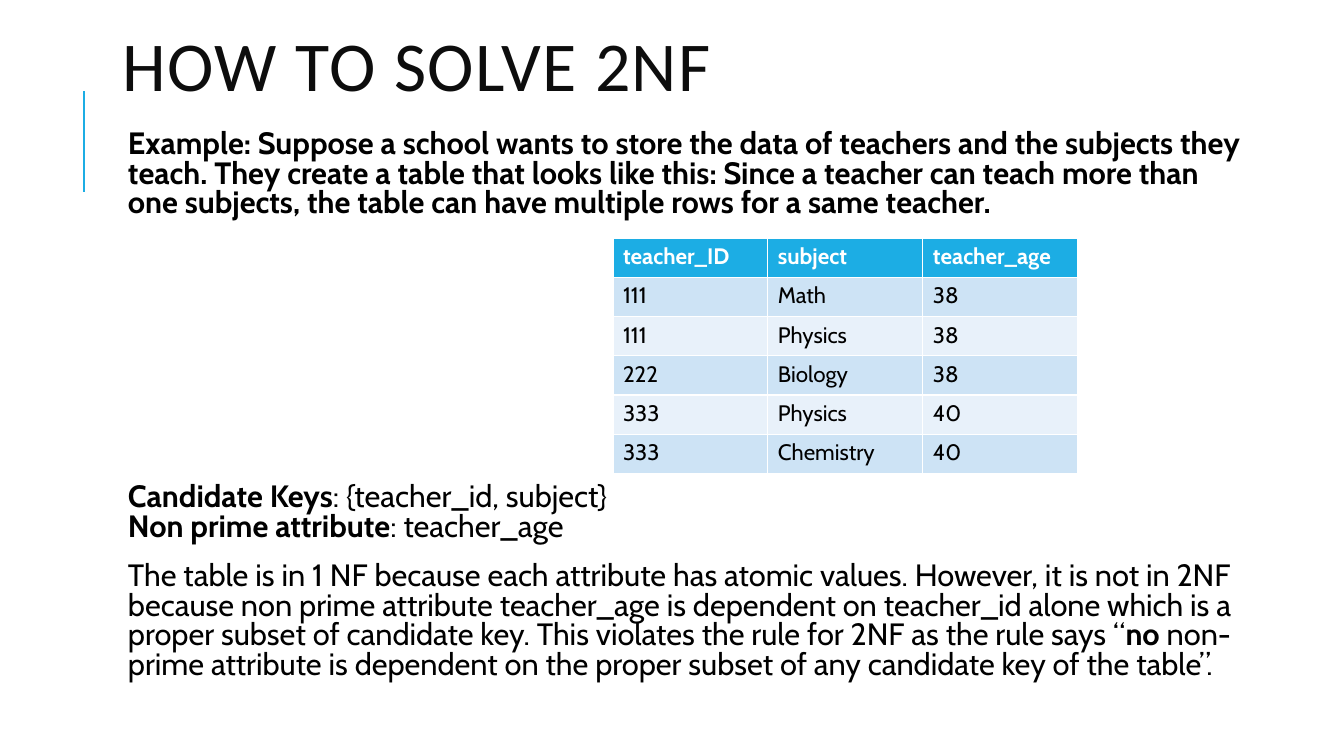
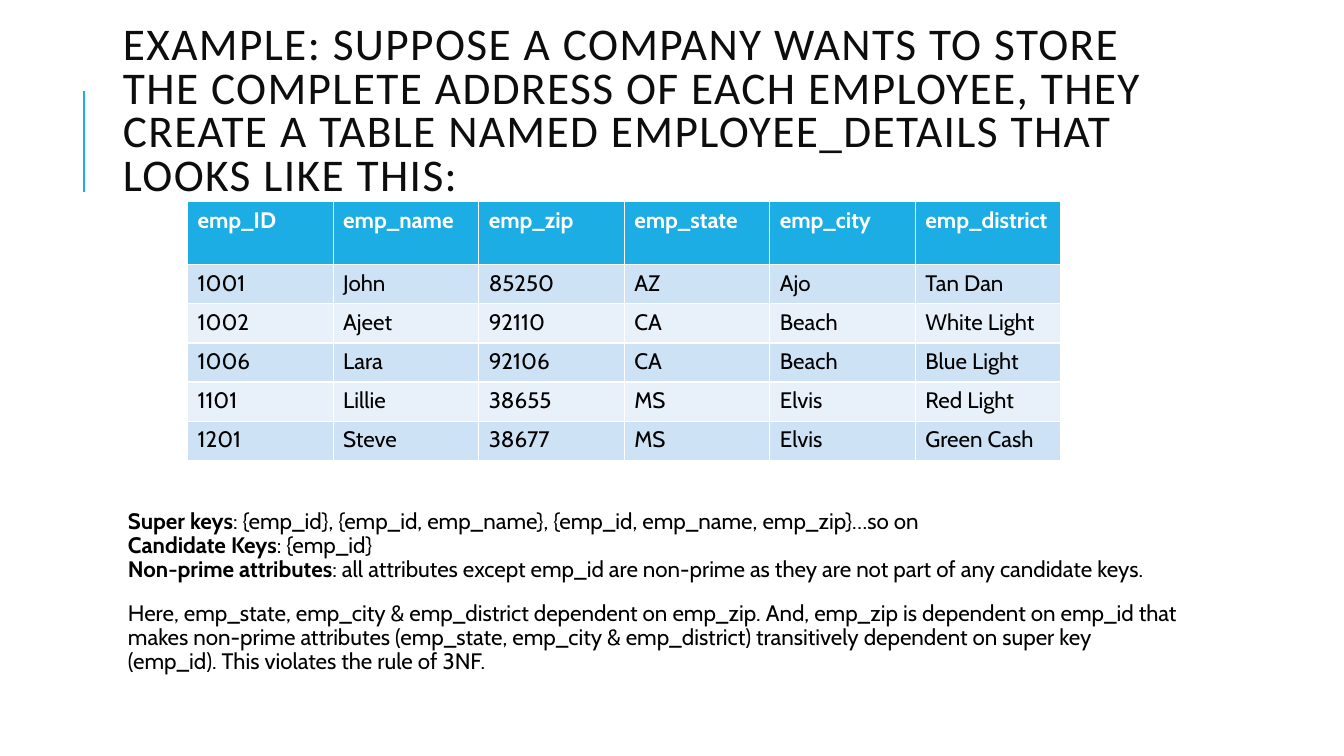
from pptx import Presentation
from pptx.dml.color import RGBColor
from pptx.enum.shapes import MSO_CONNECTOR
from pptx.enum.text import MSO_ANCHOR, MSO_AUTO_SIZE, PP_ALIGN
from pptx.oxml.ns import qn
from pptx.util import Pt

STRAIGHT = MSO_CONNECTOR.STRAIGHT
TOP, MIDDLE = MSO_ANCHOR.TOP, MSO_ANCHOR.MIDDLE
NO_FIT = MSO_AUTO_SIZE.NONE
LEFT = PP_ALIGN.LEFT

COLORS = {
    "accent": "1CADE4",
    "title": "0D0D0D",
    "text": "000000",
    "header": "FFFFFF",
    "band_dark": "CDE3F5",
    "band_light": "E8F1FA",
}
TITLE_FONT, BODY_FONT = "Calibri", "Cabin"
MARGIN = 80.64
ROW_HEIGHT = 28


def rgb(name):
    return RGBColor.from_string(COLORS[name])


def apply(target, values):
    for name, value in values.items():
        setattr(target, name, value)


class Deck:
    def __init__(self):
        self.prs = Presentation()
        apply(self.prs, {"slide_width": Pt(960), "slide_height": Pt(540)})
        self.s = None

    def slide(self):
        """Start a slide with the accent rule on its left."""
        self.s = self.prs.slides.add_slide(self.prs.slide_layouts[5])
        rule = self.s.shapes.add_connector(
            STRAIGHT, Pt(60), Pt(136.8), Pt(60), Pt(64.8))
        rule.line.color.rgb = rgb("accent")
        rule.line.width = Pt(1.5)
        sp_pr = rule._element.spPr
        sp_pr.append(sp_pr.makeelement(qn("a:effectLst"), {}))

    def place(self, sp, top, width, height):
        apply(sp, {"left": Pt(MARGIN), "top": Pt(top),
                   "width": Pt(width), "height": Pt(height)})

    def run(self, p, text, size, font=BODY_FONT, color="text", bold=False):
        r = p.add_run()
        r.text = text
        apply(r.font, {"name": font, "size": Pt(size), "bold": bold})
        r.font.color.rgb = rgb(color)
        return r

    def title(self, text, size, top, height):
        sp = self.s.shapes.title
        self.place(sp, top, 765.36, height)
        tf = sp.text_frame
        apply(tf, {"word_wrap": True, "auto_size": NO_FIT,
                   "vertical_anchor": MIDDLE})
        p = tf.paragraphs[0]
        apply(p, {"alignment": LEFT, "line_spacing": 0.8})
        r = self.run(p, text, size, TITLE_FONT, "title")
        r.font._element.set("spc", "100")

    def body(self, paragraphs, size, top, width, height, spacing):
        """Write (space before, text) pairs; ** toggles bold, \\n breaks a line."""
        sp = self.s.shapes.add_textbox(0, 0, 0, 0)
        self.place(sp, top, width, height)
        tf = sp.text_frame
        apply(tf, {"word_wrap": True, "auto_size": NO_FIT,
                   "vertical_anchor": TOP, "margin_left": Pt(10.8),
                   "margin_top": Pt(3.6), "margin_right": Pt(3.6),
                   "margin_bottom": Pt(3.6)})
        for i, (before, text) in enumerate(paragraphs):
            p = tf.add_paragraph() if i else tf.paragraphs[0]
            apply(p, {"alignment": LEFT, "line_spacing": spacing,
                      "space_before": Pt(before), "space_after": Pt(2)})
            for j, part in enumerate(text.split("**")):
                for k, line in enumerate(part.split("\n")):
                    if k:
                        p.add_line_break()
                    if line:
                        self.run(p, line, size, bold=j % 2 == 1)

    def table(self, rows, left, top, col_width, header_height=ROW_HEIGHT):
        n_rows, n_cols = len(rows), len(rows[0])
        height = header_height + ROW_HEIGHT * (n_rows - 1)
        table = self.s.shapes.add_table(
            n_rows, n_cols, Pt(left), Pt(top),
            Pt(col_width * n_cols), Pt(height)).table
        for col in table.columns:
            col.width = Pt(col_width)
        for i, values in enumerate(rows):
            header = i == 0
            table.rows[i].height = Pt(ROW_HEIGHT if i else header_height)
            band = "accent" if header else "band_dark" if i % 2 else "band_light"
            for j, value in enumerate(values):
                cell = table.cell(i, j)
                cell.fill.solid()
                cell.fill.fore_color.rgb = rgb(band)
                self.run(cell.text_frame.paragraphs[0], value, 16,
                         color="header" if header else "text", bold=header)


def second_normal_form(deck):
    deck.slide()
    deck.title("HOW TO SOLVE 2NF", 50, 18, 65.5)
    deck.body([
        (12, "**Example: Suppose a school wants to store the data of teachers "
             "and the subjects they teach. They create a table that looks like "
             "this: Since a teacher can teach more than one subjects, the table "
             "can have multiple rows for a same teacher.**"),
        (187, "**Candidate Keys**: {teacher_id, subject}\n"
              "**Non prime attribute**: teacher_age"),
        (12, "The table is in 1 NF because each attribute has atomic values. "
             "However, it is not in 2NF because non prime attribute teacher_age "
             "is dependent on teacher_id alone which is a proper subset of "
             "candidate key. This violates the rule for 2NF as the rule says "
             "“**no** non-prime attribute is dependent on the proper subset of "
             "any candidate key of the table”."),
    ], 22, 90, 812, 432, 0.8)
    deck.table([
        ("teacher_ID", "subject", "teacher_age"),
        ("111", "Math", "38"),
        ("111", "Physics", "38"),
        ("222", "Biology", "38"),
        ("333", "Physics", "40"),
        ("333", "Chemistry", "40"),
    ], 437.8, 170.2, 110.7)


def third_normal_form(deck):
    deck.slide()
    deck.title("EXAMPLE: SUPPOSE A COMPANY WANTS TO STORE THE COMPLETE ADDRESS "
               "OF EACH EMPLOYEE, THEY CREATE A TABLE NAMED EMPLOYEE_DETAILS "
               "THAT LOOKS LIKE THIS:", 32.4, 12.6, 136)
    deck.body([
        (12, "**Super keys**: {emp_id}, {emp_id, emp_name}, "
             "{emp_id, emp_name, emp_zip}…so on\n"
             "**Candidate Keys**: {emp_id}\n"
             "**Non-prime attributes**: all attributes except emp_id are "
             "non-prime as they are not part of any candidate keys."),
        (12, "Here, emp_state, emp_city & emp_district dependent on emp_zip. "
             "And, emp_zip is dependent on emp_id that makes non-prime "
             "attributes (emp_state, emp_city & emp_district) transitively "
             "dependent on super key (emp_id). This violates the rule of 3NF."),
    ], 16, 360.7, 765.36, 147, 0.9)
    deck.table([
        ("emp_ID", "emp_name", "emp_zip", "emp_state", "emp_city",
         "emp_district"),
        ("1001", "John", "85250", "AZ", "Ajo", "Tan Dan"),
        ("1002", "Ajeet", "92110", "CA", "Beach", "White Light"),
        ("1006", "Lara", "92106", "CA", "Beach", "Blue Light"),
        ("1101", "Lillie", "38655", "MS", "Elvis", "Red Light"),
        ("1201", "Steve", "38677", "MS", "Elvis", "Green Cash"),
    ], 134, 144, 104, header_height=45)


def main():
    deck = Deck()
    second_normal_form(deck)
    third_normal_form(deck)
    deck.prs.save("out.pptx")


if __name__ == "__main__":
    main()
